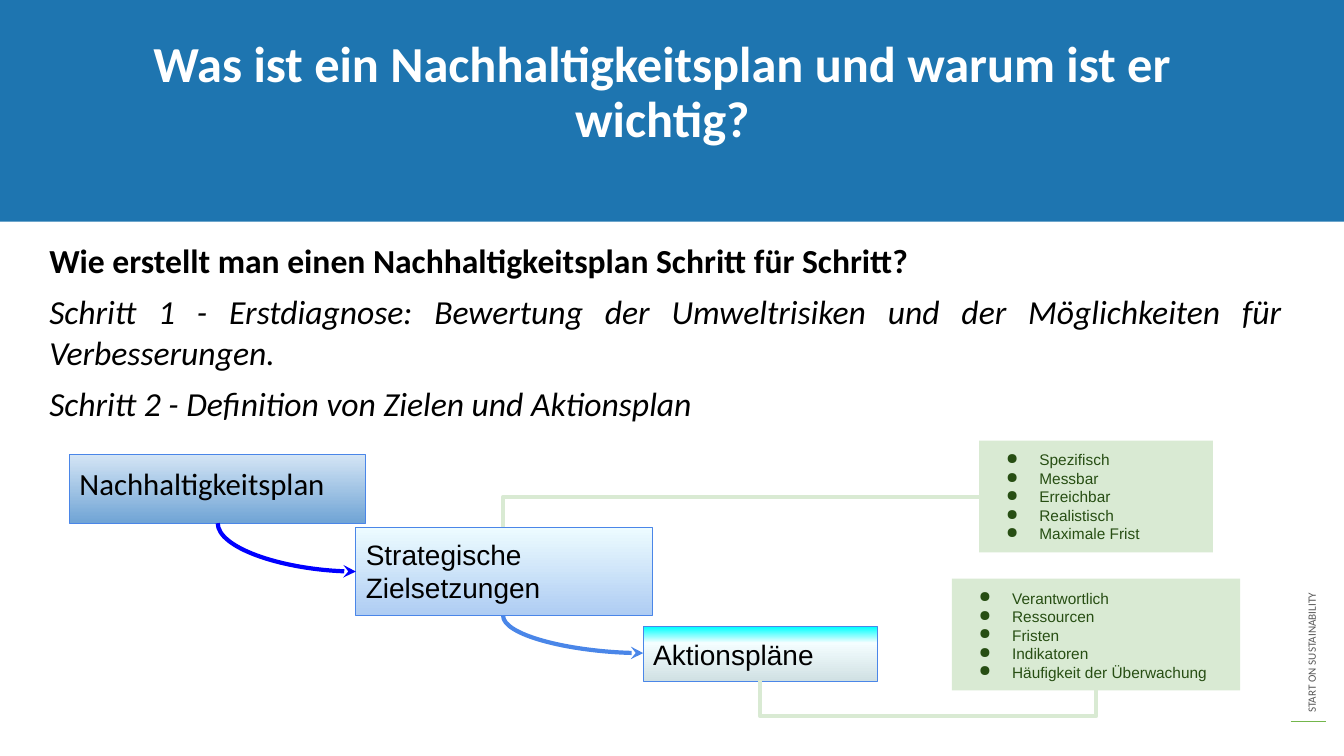
from copy import deepcopy

from pptx import Presentation
from pptx.dml.color import RGBColor
from pptx.enum.shapes import MSO_CONNECTOR, MSO_SHAPE
from pptx.enum.text import MSO_ANCHOR, PP_ALIGN
from pptx.oxml.ns import qn
from pptx.oxml.xmlchemy import OxmlElement
from pptx.util import Emu, Pt

PX = 9144  # 100 px to the inch

COLORS = {
    "header": "1E75B0", "white": "FFFFFF", "black": "000000",
    "grey": "595959", "rule": "73B64B", "border": "4A86E8",
    "arrow": "0000FF", "mint": "D9EAD3", "forest": "274E13",
}
GRADIENTS = {
    "plan": [(0, "D4E5F5"), (1, "70A4D5")],
    "goals": [(0, "EDFCFF"), (1, "AECCF3")],
    "actions": [(0, "00FFFF"), (0.29, "F4FEFF"), (1, "D0E0E3")],
}
TOP, LEFT, BOTTOM = 0, 1, 2  # connection sites of a rectangle


def px(n):
    return Emu(round(n * PX))


def rgb(name):
    return RGBColor.from_string(COLORS[name])


def add_node(parent, tag, **attrs):
    node = OxmlElement(tag)
    for key, value in attrs.items():
        node.set(key, str(value))
    parent.append(node)
    return node


def setup_frame(sp, inset=5):
    tf = sp.text_frame
    tf.word_wrap = True
    tf.vertical_anchor = MSO_ANCHOR.TOP
    tf.margin_left = tf.margin_right = px(10)
    tf.margin_top = tf.margin_bottom = px(inset)
    return tf


def add_paragraph(tf, text, size, font, color, align=PP_ALIGN.LEFT,
                  bold=False, italic=False, before=0):
    p = tf.paragraphs[0] if not tf.paragraphs[0].runs else tf.add_paragraph()
    p.alignment = align
    p.space_before = Pt(before)
    r = p.add_run()
    r.text = text
    r.font.size, r.font.name = Pt(size), font
    r.font.bold, r.font.italic = bold, italic
    r.font.color.rgb = rgb(color)
    return p


def add_text_box(slide, box):
    sp = slide.shapes.add_textbox(*map(px, box))
    return sp, setup_frame(sp)


def add_rect(slide, box, fill=None):
    sp = slide.shapes.add_shape(MSO_SHAPE.RECTANGLE, *map(px, box))
    sp.shadow.inherit = False
    sp.line.fill.background()
    if fill:
        sp.fill.solid()
        sp.fill.fore_color.rgb = rgb(fill)
    return sp


def add_step(slide, box, gradient, text, size, font):
    sp = add_rect(slide, box)
    sp.fill.gradient()
    sp.fill.gradient_angle = 270
    stops = GRADIENTS[gradient]
    gs_list = sp._element.spPr.find(qn("a:gradFill")).find(qn("a:gsLst"))
    for _ in stops[2:]:
        gs_list.append(deepcopy(gs_list[-1]))
    for stop, (position, color) in zip(sp.fill.gradient_stops, stops):
        stop.position = position
        stop.color.rgb = RGBColor.from_string(color)
    sp.line.color.rgb = rgb("border")
    sp.line.width = Pt(0.75)
    add_paragraph(setup_frame(sp, 10), text, size, font, "black", PP_ALIGN.JUSTIFY)
    return sp


def add_bullet_box(slide, box, items):
    sp = add_rect(slide, box, "mint")
    tf = setup_frame(sp, 10)
    for item in items:
        pPr = add_paragraph(tf, item, 11, "Arial", "forest")._p.get_or_add_pPr()
        pPr.set("marL", str(px(50)))
        pPr.set("indent", str(px(-33)))
        add_node(add_node(pPr, "a:buClr"), "a:srgbClr", val=COLORS["forest"])
        add_node(pPr, "a:buChar", char="●")
    return sp


def add_line(slide, kind, start, end, color, width):
    cxn = slide.shapes.add_connector(kind, *map(px, start + end))
    cxn.line.color.rgb = rgb(color)
    cxn.line.width = Pt(width)
    add_node(cxn._element.spPr, "a:effectLst")
    return cxn


def add_link(slide, preset, source, target, start, end, color, arrow=False, adjust=None):
    """Connector that leaves its source vertically, so its frame is turned by 90°."""
    kind = MSO_CONNECTOR.CURVE if preset.startswith("curved") else MSO_CONNECTOR.ELBOW
    cxn = add_line(slide, kind, start, end, color, 3)
    cxn.begin_connect(*source)
    cxn.end_connect(*target)

    # Turned frame around the same centre
    (x1, y1), (x2, y2) = start, end
    w, h = abs(y2 - y1), abs(x2 - x1)
    cxn.left, cxn.top = px((x1 + x2 - w) / 2), px((y1 + y2 - h) / 2)
    cxn.width, cxn.height = px(w), px(h)
    spPr = cxn._element.spPr
    xfrm = spPr.find(qn("a:xfrm"))
    down = y2 > y1
    xfrm.set("rot", str((270 if down else 90) * 60000))
    xfrm.set("flipH", "1")
    xfrm.set("flipV", "0" if down else "1")

    geom = spPr.find(qn("a:prstGeom"))
    geom.set("prst", preset)
    if adjust:
        add_node(geom.find(qn("a:avLst")), "a:gd", name="adj1", fmla=f"val {adjust}")
    if arrow:
        add_node(spPr.find(qn("a:ln")), "a:tailEnd", type="stealth")


def main():
    prs = Presentation()
    prs.slide_width, prs.slide_height = px(1333), px(750)
    slide = prs.slides.add_slide(prs.slide_layouts[6])

    # Side label with its rule
    sp, tf = add_text_box(slide, (1078, 482, 446, 24))
    sp.rotation = 270
    add_paragraph(tf, "START ON SUSTAINABILITY", 8, "Calibri", "grey")
    add_line(slide, MSO_CONNECTOR.STRAIGHT, (1280, 716), (1315, 716), "rule", 1)

    # Header band and title
    add_rect(slide, (0, 0, 1333, 220), "header")
    sp, tf = add_text_box(slide, (84, 34, 1146, 88))
    p = add_paragraph(tf, "Was ist ein Nachhaltigkeitsplan und warum ist er wichtig?",
                      36, "Calibri", "white", PP_ALIGN.CENTER, bold=True)
    p.line_spacing = 0.9

    # Question and steps
    sp, tf = add_text_box(slide, (39, 233, 1242, 171))
    for text, heading in (
        ("Wie erstellt man einen Nachhaltigkeitsplan Schritt für Schritt?", True),
        ("Schritt 1 - Erstdiagnose: Bewertung der Umweltrisiken und der "
         "Möglichkeiten für Verbesserungen.", False),
        ("Schritt 2 - Definition von Zielen und Aktionsplan", False),
    ):
        add_paragraph(tf, text, 24, "Calibri", "black", PP_ALIGN.JUSTIFY,
                      bold=heading, italic=not heading, before=8)

    # Cascade from plan to actions
    actions = add_step(slide, (638, 622, 232, 54), "actions", "Aktionspläne", 20, "Arial")
    goals = add_step(slide, (353, 523, 294, 88), "goals",
                     "Strategische Zielsetzungen", 20, "Arial")
    plan = add_step(slide, (69, 451, 294, 68), "plan", "Nachhaltigkeitsplan", 22, "Calibri")

    # Criteria lists
    criteria = add_bullet_box(slide, (971, 437, 232, 111), (
        "Spezifisch", "Messbar", "Erreichbar", "Realistisch", "Maximale Frist"))
    contents = add_bullet_box(slide, (944, 574, 286, 111), (
        "Verantwortlich", "Ressourcen", "Fristen", "Indikatoren",
        "Häufigkeit der Überwachung"))

    # Connectors
    add_link(slide, "curvedConnector2", (plan, BOTTOM), (goals, LEFT),
             (216, 519), (353, 567), "arrow", arrow=True)
    add_link(slide, "curvedConnector2", (goals, BOTTOM), (actions, LEFT),
             (499, 611), (638, 648), "border", arrow=True)
    add_link(slide, "bentConnector2", (goals, TOP), (criteria, LEFT),
             (499, 523), (971, 493), "mint")
    add_link(slide, "bentConnector3", (actions, BOTTOM), (contents, BOTTOM),
             (754, 675), (1087, 685), "mint", adjust=355600)

    prs.save("out.pptx")


if __name__ == "__main__":
    main()
